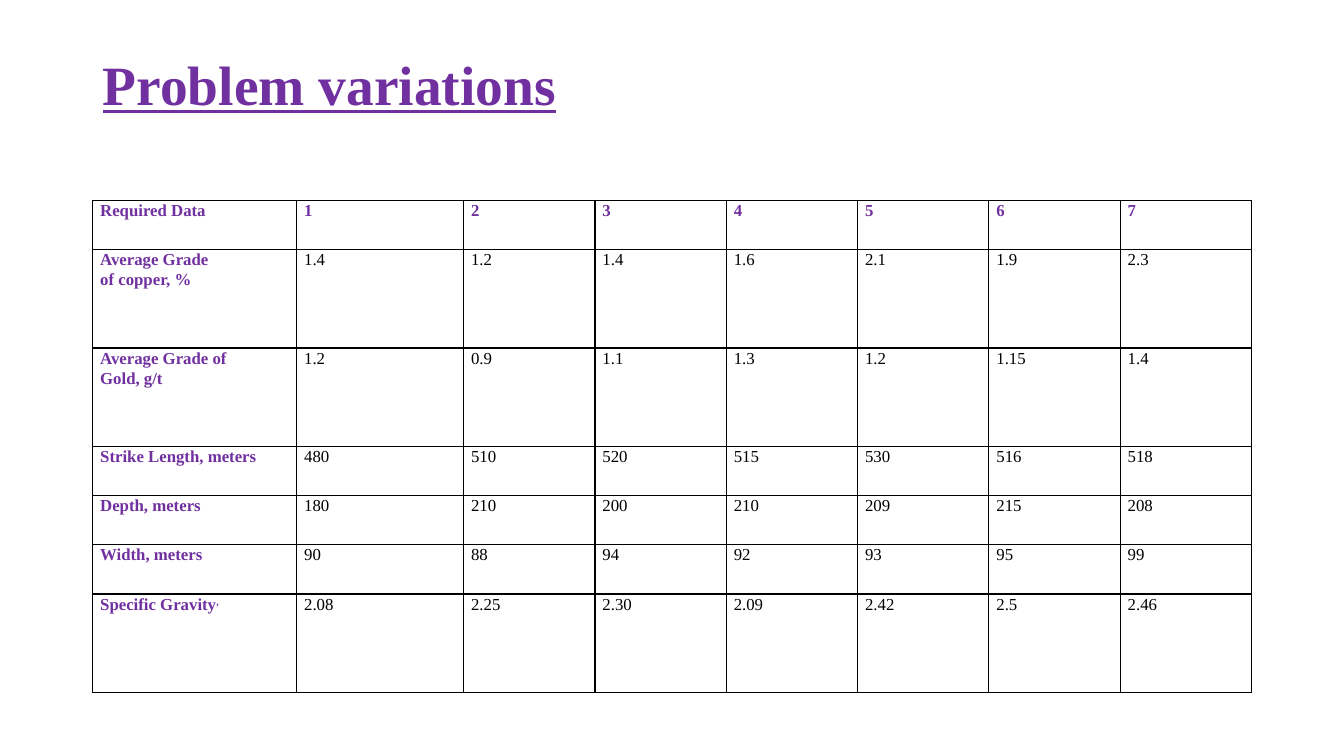
"""Build the slide of problem variations with its table of ore data."""
import pptx
import pptx.util
import pptx.dml.color
import pptx.enum.text
import pptx.oxml
import pptx.oxml.ns

Pt = pptx.util.Pt
TITLE = "Problem variations"
ROWS = [
    ("Required Data", 1, "1 2 3 4 5 6 7"),
    ("Average Grade\nof copper, %", 2, "1.4 1.2 1.4 1.6 2.1 1.9 2.3"),
    ("Average Grade of\nGold, g/t", 2, "1.2 0.9 1.1 1.3 1.2 1.15 1.4"),
    ("Strike Length, meters", 1, "480 510 520 515 530 516 518"),
    ("Depth, meters", 1, "180 210 200 210 209 215 208"),
    ("Width, meters", 1, "90 88 94 92 93 95 99"),
    ("Specific Gravity", 2, "2.08 2.25 2.30 2.09 2.42 2.5 2.46"),
]
RAISED = {"Specific Gravity": ","}
HUES = {"head": "7030A0", "text": "000000", "line": "000000"}
FACE = "Times New Roman"
LEFT, WIDE = 66.2, 828
TOP, UNIT = 143.2, 35.14
COLS = [145.7, 119.3] + [93.8] * 6


def add_run(para, text, size, hue, bold):
    """Add one styled run to a paragraph."""
    para.line_spacing = 1.07
    run = para.add_run()
    run.text = text
    font = run.font
    font.name, font.size, font.bold = FACE, Pt(size), bold
    font.color.rgb = pptx.dml.color.RGBColor.from_string(HUES[hue])
    return run


def add_lines(cell):
    """Draw the four borders of a cell."""
    props = cell._tc.get_or_add_tcPr()
    for spot, side in enumerate("LRTB"):
        props.insert(spot, pptx.oxml.parse_xml(
            f'<a:ln{side} {pptx.oxml.ns.nsdecls("a")} w="{Pt(1)}"><a:solidFill>'
            f'<a:srgbClr val="{HUES["line"]}"/></a:solidFill></a:ln{side}>'))


def fill_cell(cell, text, head):
    """Write and style one cell."""
    cell.margin_left = cell.margin_right = Pt(5.4)
    cell.margin_top = cell.margin_bottom = 0
    cell.fill.background()
    add_lines(cell)
    frame = cell.text_frame
    for num, line in enumerate(text.split("\n")):
        para = frame.add_paragraph() if num else frame.paragraphs[0]
        add_run(para, line, 12, "head" if head else "text", head)
    if text in RAISED:
        mark = add_run(para, RAISED[text], 12, "head", True)
        mark.font._element.set("baseline", "30000")


def add_title(slide):
    """Place the underlined title."""
    title = slide.shapes.title
    title.left, title.top, title.width, title.height = map(Pt, (LEFT, 28.8, WIDE, 104.4))
    frame = title.text_frame
    frame.vertical_anchor = pptx.enum.text.MSO_ANCHOR.TOP
    para = frame.paragraphs[0]
    para.alignment = pptx.enum.text.PP_ALIGN.LEFT
    add_run(para, TITLE, 39.6, "head", True).font.underline = True


def add_grid(slide):
    """Place the table of data."""
    high = UNIT * sum(row[1] for row in ROWS)
    grid = slide.shapes.add_table(
        len(ROWS), len(COLS), Pt(LEFT), Pt(TOP), Pt(WIDE), Pt(high)).table
    grid.first_row = grid.horz_banding = False
    for col, width in zip(grid.columns, COLS):
        col.width = Pt(width)
    for r, (label, units, values) in enumerate(ROWS):
        grid.rows[r].height = Pt(UNIT * units)
        for c, text in enumerate([label] + values.split()):
            fill_cell(grid.cell(r, c), text, r == 0 or c == 0)


def main():
    """Make and save the deck."""
    deck = pptx.Presentation()
    deck.slide_width, deck.slide_height = Pt(960), Pt(540)
    slide = deck.slides.add_slide(deck.slide_layouts[5])
    add_title(slide)
    add_grid(slide)
    deck.save("out.pptx")


if __name__ == "__main__":
    main()
